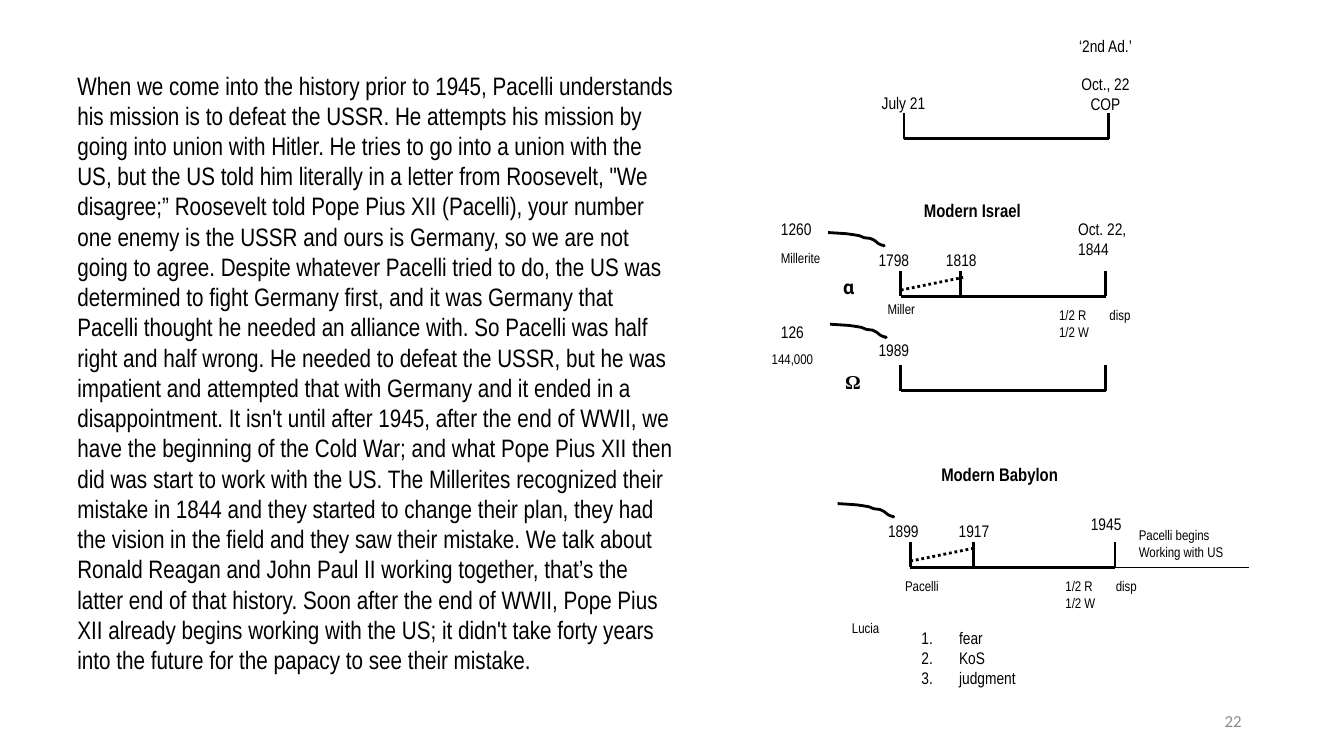
from lxml.etree import SubElement
from pptx import Presentation
from pptx.dml.color import RGBColor
from pptx.enum.dml import MSO_LINE
from pptx.enum.shapes import MSO_CONNECTOR
from pptx.enum.text import MSO_ANCHOR, MSO_AUTO_SIZE, PP_ALIGN
from pptx.oxml.ns import qn
from pptx.util import Cm, Pt

COLORS = {"ink": "000000", "page_number": "8C8C8C"}
CENTER = PP_ALIGN.CENTER
TICK = 0.64
SPAN = 5.16
SWOOP = [(0.46, 0.03), (0.61, 0.05), (0.79, 0.08), (0.91, 0.13), (1.07, 0.15),
         (1.17, 0.2), (1.27, 0.28), (1.36, 0.32), (1.4, 0.32), (1.42, 0.36)]

HISTORY = [
    "When we come into the history prior to 1945, Pacelli understands his mission is to defeat "
    "the USSR.",
    "He attempts his mission by going into union with Hitler.",
    "He tries to go into a union with the US, but the US told him literally in a letter from "
    "Roosevelt, \"We disagree;” Roosevelt told Pope Pius XII (Pacelli), your number one enemy is "
    "the USSR and ours is Germany, so we are not going to agree.",
    "Despite whatever Pacelli tried to do, the US was determined to fight Germany first, and it "
    "was Germany that Pacelli thought he needed an alliance with.",
    "So Pacelli was half right and half wrong.",
    "He needed to defeat the USSR, but he was impatient and attempted that with Germany and it "
    "ended in a disappointment.",
    "It isn't until after 1945, after the end of WWII, we have the beginning of the Cold War; "
    "and what Pope Pius XII then did was start to work with the US.",
    "The Millerites recognized their mistake in 1844 and they started to change their plan, they "
    "had the vision in the field and they saw their mistake.",
    "We talk about Ronald Reagan and John Paul II working together, that’s the latter end of "
    "that history.",
    "Soon after the end of WWII, Pope Pius XII already begins working with the US; it didn't "
    "take forty years into the future for the papacy to see their mistake.",
]


def add_text(slide, text, left, top, width=1.58, height=TICK, size=12, font="Arial Narrow",
             color="ink", bold=False, align=PP_ALIGN.LEFT, anchor=MSO_ANCHOR.TOP,
             inset=0.1, numbered=False, grow=False):
    frame = slide.shapes.add_textbox(Cm(left), Cm(top), Cm(width), Cm(height)).text_frame
    frame.word_wrap = True
    frame.auto_size = MSO_AUTO_SIZE.SHAPE_TO_FIT_TEXT if grow else MSO_AUTO_SIZE.NONE
    frame.vertical_anchor = anchor
    frame.margin_left = frame.margin_right = Cm(inset)
    frame.margin_top = frame.margin_bottom = Cm(min(inset, 0.13))
    frame.text = text
    for paragraph in frame.paragraphs:
        paragraph.alignment = align
        for run in paragraph.runs:
            run.font.size = Pt(size)
            run.font.name = font
            run.font.bold = bold
            run.font.color.rgb = RGBColor.from_string(COLORS[color])
        if numbered:
            properties = paragraph._p.get_or_add_pPr()
            properties.set("marL", str(Cm(0.95)))
            properties.set("indent", str(-Cm(0.95)))
            SubElement(properties, qn("a:buAutoNum"), type="arabicPeriod")


def add_line(slide, x1, y1, x2, y2, weight=2, dash=None):
    stroke = slide.shapes.add_connector(MSO_CONNECTOR.STRAIGHT, Cm(x1), Cm(y1), Cm(x2), Cm(y2))
    stroke.line.color.rgb = RGBColor.from_string(COLORS["ink"])
    stroke.line.width = Pt(weight)
    if dash:
        stroke.line.dash_style = dash
    SubElement(stroke._element.spPr, qn("a:effectLst"))


def add_swoop(slide, left, top):
    builder = slide.shapes.build_freeform(Cm(left), Cm(top))
    builder.add_line_segments([(Cm(left + x), Cm(top + y)) for x, y in SWOOP], close=False)
    swoop = builder.convert_to_shape()
    swoop.shadow.inherit = False
    swoop.fill.background()
    swoop.line.color.rgb = RGBColor.from_string(COLORS["ink"])
    swoop.line.width = Pt(2)


def add_bracket(slide, left, top, middle=None):
    base = top + TICK
    add_line(slide, left, base, left + SPAN, base)
    for offset in (0, SPAN):
        add_line(slide, left + offset, base, left + offset, top)
    if middle:
        add_line(slide, left + middle, top, left + middle, base)
        add_line(slide, left, base - 0.16, left + 1.57, base - 0.48, dash=MSO_LINE.ROUND_DOT)


def add_labels(slide, left, top, labels):
    for text, x, y, form in labels:
        add_text(slide, text, left + x, top + y, **form)


def add_outcome(slide, left, top):
    add_labels(slide, left, top, [
        ("1/2 R\n1/2 W", 0, 0, dict(width=1.27, height=1.42, size=10)),
        ("disp", 1.27, 0, dict(width=1.12, size=10)),
    ])


def add_history(slide, left, top, width, height):
    add_text(slide, " ".join(HISTORY), left, top, width, height, size=18, inset=0.25, grow=True)


def add_advent(slide, left, top):
    add_bracket(slide, left, top)
    add_labels(slide, left, top, [
        ("July 21", -0.66, -0.62, {}),
        ("Oct., 22\nCOP", 4.37, -1.11, dict(width=1.42, height=1.42, align=CENTER)),
        ("‘2nd Ad.’", 3.96, -2.06, dict(width=2.24, align=CENTER)),
    ])


def add_israel_alpha(slide, left, top):
    add_bracket(slide, left, top, middle=1.5)
    add_swoop(slide, left - 1.83, top - 0.97)
    add_labels(slide, left, top, [
        ("Modern Israel", -0.71, -1.9,
         dict(width=5.03, height=0.8, size=13, bold=True, align=CENTER)),
        ("1260", -3.12, -1.42, {}),
        ("Millerite", -3.4, -0.64, dict(width=1.75, height=0.8, size=10, align=CENTER)),
        ("α", -1.55, 0, dict(width=1.17, size=14, font="Roboto", bold=True)),
        ("1798", -0.66, -0.64, {}),
        ("1818", 1.04, -0.64, dict(width=1.12)),
        ("Oct. 22,\n1844", 4.37, -1.42, dict(width=1.42, height=1.42)),
        ("Miller", -0.43, 0.64, dict(height=0.8, size=10)),
    ])
    add_outcome(slide, left + 3.89, top + 0.79)


def add_israel_omega(slide, left, top):
    add_bracket(slide, left, top)
    add_swoop(slide, left - 1.78, top - 1.04)
    add_labels(slide, left, top, [
        ("126", -3.12, -1.19, {}),
        ("144,000", -3.58, -0.48, dict(width=1.7, height=0.8, size=10, align=CENTER)),
        ("Ω", -1.5, 0, dict(width=1.17, size=14, font="Times New Roman", bold=True)),
        ("1989", -0.66, -0.74, {}),
    ])


def add_babylon(slide, left, top):
    add_bracket(slide, left, top, middle=1.6)
    add_swoop(slide, left - 1.83, top - 0.97)
    add_line(slide, left + SPAN, top + TICK, left + 8.53, top + TICK, weight=0.5)
    add_labels(slide, left, top, [
        ("Modern Babylon", -0.66, -2.08,
         dict(width=5.82, height=0.8, size=13, bold=True, align=CENTER)),
        ("1899", -0.66, -0.64, {}),
        ("1917", 1.12, -0.64, dict(width=1.12)),
        ("1945", 4.45, -0.81, dict(width=1.12)),
        ("Pacelli begins\nWorking with US", 5.66, -0.48, dict(width=2.39, height=1.04, size=10)),
        ("Pacelli", -0.23, 0.79, dict(size=10)),
        ("Lucia", -1.57, 1.85, dict(size=10)),
        ("fear\nKoS\njudgment", 0.18, 2.06, dict(width=2.84, height=1.75, numbered=True)),
    ])
    add_outcome(slide, left + 3.81, top + 0.79)


def main():
    presentation = Presentation()
    presentation.slide_width = Cm(33.87)
    presentation.slide_height = Cm(19.05)
    slide = presentation.slides.add_slide(presentation.slide_layouts[6])
    add_history(slide, 1.7, 1.63, 15.62, 15.65)
    add_advent(slide, 22.78, 2.86)
    add_israel_alpha(slide, 22.7, 6.83)
    add_israel_omega(slide, 22.7, 9.21)
    add_babylon(slide, 22.94, 13.66)
    add_text(slide, "22", 23.92, 17.66, 7.62, 1.01, font="Calibri", color="page_number",
             align=PP_ALIGN.RIGHT, anchor=MSO_ANCHOR.MIDDLE, inset=0.25)
    presentation.save("out.pptx")


if __name__ == "__main__":
    main()
